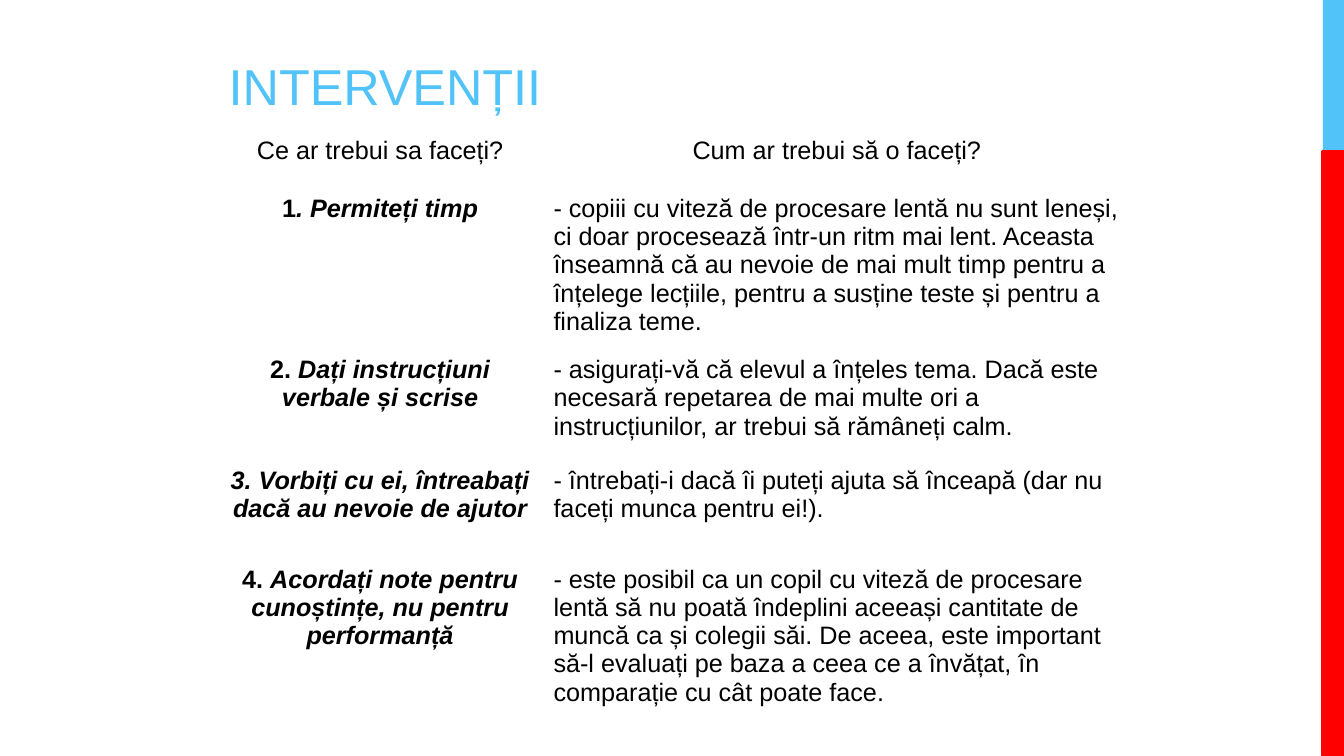
from pptx import Presentation
from pptx.dml.color import RGBColor
from pptx.enum.shapes import MSO_SHAPE as Shape
from pptx.enum.text import MSO_ANCHOR as Anchor, PP_ALIGN as Align
from pptx.util import Inches, Pt

COLORS = {"blue": "51C3F9", "red": "FF0000", "text": "000000"}
FONT = "Arial"
COLUMN_WIDTHS = [3.24, 5.82]
ROW_HEIGHTS = [0.57, 1.33, 1.1, 0.98, 1.76]
HEADINGS = ["Ce ar trebui sa faceți?", "Cum ar trebui să o faceți?"]

# Upright start of the label, italic rest of the label, advice
INTERVENTIONS = [
    ("1", ". Permiteți timp",
     "- copiii cu viteză de procesare lentă nu sunt leneși, ci doar procesează "
     "într-un ritm mai lent. Aceasta înseamnă că au nevoie de mai mult timp pentru "
     "a înțelege lecțiile, pentru a susține teste și pentru a finaliza teme."),
    ("2. ", "Dați instrucțiuni verbale și scrise",
     "- asigurați-vă că elevul a înțeles tema. Dacă este necesară repetarea de mai "
     "multe ori a instrucțiunilor, ar trebui să rămâneți calm."),
    ("", "3. Vorbiți cu ei, întreabați dacă au nevoie de ajutor",
     "- întrebați-i dacă îi puteți ajuta să înceapă (dar nu faceți munca pentru ei!)."),
    ("4. ", "Acordați note pentru cunoștințe, nu pentru performanță",
     "- este posibil ca un copil cu viteză de procesare lentă să nu poată îndeplini "
     "aceeași cantitate de muncă ca și colegii săi. De aceea, este important să-l "
     "evaluați pe baza a ceea ce a învățat, în comparație cu cât poate face."),
]


def color(name):
    return RGBColor.from_string(COLORS[name])


def add_text(paragraph, text, size=18, ink="text", bold=False, italic=False,
             align=Align.LEFT):
    paragraph.alignment = align
    run = paragraph.add_run()
    run.text = text
    font = run.font
    font.name, font.size = FONT, Pt(size)
    font.bold, font.italic = bold, italic
    font.color.rgb = color(ink)


def add_side_bar(slide, left, top, width, height, blue_height=1.5):
    """Blue block above a red, outlined one."""
    blocks = [("blue", top, blue_height),
              ("red", top + blue_height, height - blue_height)]
    for name, block_top, block_height in blocks:
        block = slide.shapes.add_shape(
            Shape.RECTANGLE, Inches(left), Inches(block_top),
            Inches(width), Inches(block_height))
        block.shadow.inherit = False
        block.fill.solid()
        block.fill.fore_color.rgb = color(name)
        if name == "red":
            block.line.color.rgb = color(name)
            block.line.width = Pt(2.25)
        else:
            block.line.fill.background()


def add_title(slide, left, top, width, height):
    box = slide.shapes.add_textbox(
        Inches(left), Inches(top), Inches(width), Inches(height))
    frame = box.text_frame
    frame.word_wrap = True
    frame.vertical_anchor = Anchor.BOTTOM
    add_text(frame.paragraphs[0], "INTERVENȚII", size=36, ink="blue")


def add_interventions(slide, left, top):
    table = slide.shapes.add_table(
        len(ROW_HEIGHTS), len(COLUMN_WIDTHS), Inches(left), Inches(top),
        Inches(sum(COLUMN_WIDTHS)), Inches(sum(ROW_HEIGHTS))).table
    table.first_row = table.horz_banding = False
    for column, width in zip(table.columns, COLUMN_WIDTHS):
        column.width = Inches(width)
    for row, height in zip(table.rows, ROW_HEIGHTS):
        row.height = Inches(height)
    for cell in table.iter_cells():
        cell.fill.background()

    for index, heading in enumerate(HEADINGS):
        paragraph = table.cell(0, index).text_frame.paragraphs[0]
        add_text(paragraph, heading, align=Align.CENTER)
    for index, (number, label, advice) in enumerate(INTERVENTIONS, start=1):
        paragraph = table.cell(index, 0).text_frame.paragraphs[0]
        if number:
            add_text(paragraph, number, bold=True, align=Align.CENTER)
        add_text(paragraph, label, bold=True, italic=True, align=Align.CENTER)
        add_text(table.cell(index, 1).text_frame.paragraphs[0], advice)


def main():
    presentation = Presentation()
    presentation.slide_width = Inches(13.33)
    presentation.slide_height = Inches(7.5)
    slide = presentation.slides.add_slide(presentation.slide_layouts[6])
    add_side_bar(slide, 13.12, 0, 0.21, 7.5)
    add_title(slide, 2.17, 0.13, 6.33, 1.07)
    add_interventions(slide, 2.15, 1.31)
    presentation.save("out.pptx")


if __name__ == "__main__":
    main()
